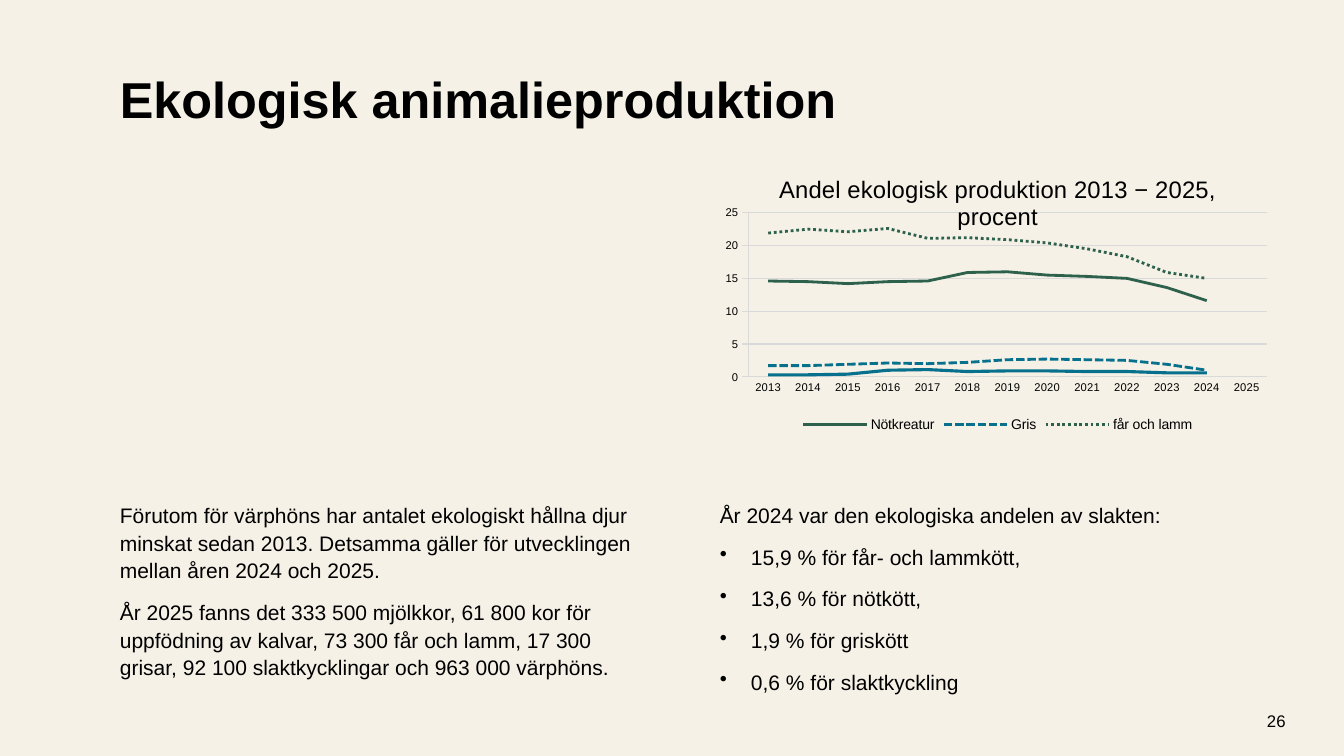
"""Build the slide on organic animal production."""
from dataclasses import dataclass

from pptx import Presentation
from pptx.chart.data import CategoryChartData as ChartData
from pptx.dml.color import RGBColor as Rgb
from pptx.enum.chart import XL_CHART_TYPE as Kind
from pptx.enum.chart import XL_LEGEND_POSITION as Place
from pptx.enum.chart import XL_TICK_MARK as Tick
from pptx.enum.dml import MSO_LINE as Dash
from pptx.enum.text import MSO_ANCHOR as Anchor
from pptx.enum.text import PP_ALIGN as Align
from pptx.oxml import parse_xml
from pptx.oxml.ns import nsdecls
from pptx.util import Inches, Pt


@dataclass(frozen=True)
class Theme:
    font: str = "Arial"
    paper: str = "F5F1E7"
    ink: str = "000000"
    grid: str = "D9D9D9"
    green: str = "2E614C"
    blue: str = "07708C"
    title: int = 36
    head: int = 17
    body: int = 15
    page: int = 12
    key: int = 10
    tick: int = 8


LOOK = Theme()
YEARS = range(2013, 2026)
SHARES = [
    ("Nötkreatur", LOOK.green, 2, None,
     (14.6, 14.5, 14.2, 14.5, 14.6, 15.9, 16, 15.5, 15.3, 15, 13.6, 11.6, None)),
    ("Gris", LOOK.blue, 2, Dash.SQUARE_DOT,
     (1.7, 1.7, 1.9, 2.1, 2, 2.2, 2.6, 2.7, 2.6, 2.5, 1.9, 1, None)),
    ("får och lamm", LOOK.green, 2, Dash.ROUND_DOT,
     (21.9, 22.5, 22.1, 22.6, 21.1, 21.2, 20.9, 20.4, 19.5, 18.3, 15.9, 15, None)),
    ("Slaktkyckling", LOOK.blue, 2.25, None,
     (0.3, 0.3, 0.4, 1, 1.1, 0.8, 0.9, 0.9, 0.8, 0.8, 0.6, 0.6, None)),
]
HERDS = [
    "Förutom för värphöns har antalet ekologiskt hållna djur minskat sedan 2013. "
    "Detsamma gäller för utvecklingen mellan åren 2024 och 2025.",
    "År 2025 fanns det 333 500 mjölkkor, 61 800 kor för uppfödning av kalvar, "
    "73 300 får och lamm, 17 300 grisar, 92 100 slaktkycklingar och 963 000 värphöns.",
]
MEAT = [
    "År 2024 var den ekologiska andelen av slakten:",
    "15,9 % för får- och lammkött,",
    "13,6 % för nötkött,",
    "1,9 % för griskött",
    "0,6 % för slaktkyckling",
]


def apply(item, **form):
    """Set each format value on the item."""
    for name, value in form.items():
        setattr(item, name, value)


def set_font(font, size, bold=False):
    """Give a font the theme face and ink."""
    apply(font, name=LOOK.font, size=Pt(size), bold=bold)
    font.color.rgb = Rgb.from_string(LOOK.ink)


def set_line(line, color, width, dash=None):
    """Colour and size a line."""
    line.color.rgb = Rgb.from_string(color)
    apply(line, width=Pt(width), dash_style=dash)


def add_dot(para):
    """Hang a bullet before a paragraph."""
    props = para._p.get_or_add_pPr()
    step = Inches(0.31)
    props.set("marL", str(step))
    props.set("indent", str(-step))
    props.append(parse_xml(f'<a:buChar {nsdecls("a")} char="•"/>'))


def add_text(slide, box, lines, size, bold=False, dots=False,
             anchor=Anchor.TOP, **form):
    """Add a wrapped text box with one paragraph a line."""
    frame = slide.shapes.add_textbox(*map(Inches, box)).text_frame
    apply(frame, word_wrap=True, vertical_anchor=anchor)
    for i, line in enumerate(lines):
        para = frame.paragraphs[0] if i == 0 else frame.add_paragraph()
        para.text = line
        apply(para, space_before=Pt(10 if i else 0), **form)
        if dots and i:
            add_dot(para)
        set_font(para.runs[0].font, size, bold)


def set_plot(chart, x, y, w, h):
    """Pin the inner plot area to fractions of the chart."""
    parts = [("layoutTarget", "inner"), ("xMode", "edge"), ("yMode", "edge"),
             ("x", x), ("y", y), ("w", w), ("h", h)]
    tags = "".join(f'<c:{tag} val="{val}"/>' for tag, val in parts)
    area = chart._chartSpace.chart.plotArea
    for old in area.findall(area.tag.replace("plotArea", "layout")):
        area.remove(old)
    area.insert(0, parse_xml(
        f'<c:layout {nsdecls("c")}><c:manualLayout>{tags}</c:manualLayout></c:layout>'))


def set_fill(chart):
    """Fill the chart with the paper colour and no border."""
    chart._chartSpace.chart.addnext(parse_xml(
        f'<c:spPr {nsdecls("c", "a")}><a:solidFill><a:srgbClr val="{LOOK.paper}"/>'
        '</a:solidFill><a:ln><a:noFill/></a:ln></c:spPr>'))


def set_key(chart, skip):
    """Show the legend below, without the skipped series."""
    chart.has_legend = True
    key = chart.legend
    apply(key, position=Place.BOTTOM, include_in_layout=False)
    set_font(key.font, LOOK.key)
    key._element.insert(1, parse_xml(
        f'<c:legendEntry {nsdecls("c")}><c:idx val="{skip}"/>'
        '<c:delete val="1"/></c:legendEntry>'))


def set_axes(chart):
    """Style both axes and the gridlines."""
    for axis, mark in ((chart.category_axis, Tick.NONE),
                       (chart.value_axis, Tick.OUTSIDE)):
        apply(axis, major_tick_mark=mark, minor_tick_mark=Tick.NONE)
        set_font(axis.tick_labels.font, LOOK.tick)
        set_line(axis.format.line, LOOK.grid, 0.75)
    apply(chart.value_axis, minimum_scale=0, maximum_scale=25, major_unit=5)
    set_line(chart.value_axis.major_gridlines.format.line, LOOK.grid, 0.75)


def add_lines(slide, box, title):
    """Add the line chart of organic shares."""
    data = ChartData()
    data.categories = [str(year) for year in YEARS]
    for name, *_, vals in SHARES:
        data.add_series(name, vals)
    chart = slide.shapes.add_chart(Kind.LINE, *map(Inches, box), data).chart
    set_font(chart.font, LOOK.tick)
    set_fill(chart)
    chart.has_title = True
    para = chart.chart_title.text_frame.paragraphs[0]
    para.text = title
    set_font(para.runs[0].font, LOOK.head)
    set_axes(chart)
    set_key(chart, len(SHARES) - 1)
    set_plot(chart, 0.056, 0.196, 0.923, 0.59)
    plot = chart.plots[0]
    plot.vary_by_categories = False
    for series, (_, color, width, dash, _) in zip(plot.series, SHARES):
        series.smooth = False
        set_line(series.format.line, color, width, dash)


def main():
    """Build and save the slide."""
    deck = Presentation()
    apply(deck, slide_width=Inches(13.33), slide_height=Inches(7.5))
    slide = deck.slides.add_slide(deck.slide_layouts[6])
    back = slide.background.fill
    back.solid()
    back.fore_color.rgb = Rgb.from_string(LOOK.paper)
    add_text(slide, (1.09, 0.68, 9.57, 0.65), ["Ekologisk animalieproduktion"],
             LOOK.title, bold=True, anchor=Anchor.BOTTOM, line_spacing=0.9)
    add_lines(slide, (7.11, 1.57, 5.57, 2.76),
              "Andel ekologisk produktion 2013 − 2025, procent")
    add_text(slide, (1.09, 4.91, 5.49, 2.24), HERDS, LOOK.body, line_spacing=1.1)
    add_text(slide, (7.04, 4.91, 5.49, 2.44), MEAT, LOOK.body, dots=True,
             line_spacing=1.1)
    add_text(slide, (11.69, 6.95, 1.16, 0.4), ["26"], LOOK.page,
             anchor=Anchor.MIDDLE, alignment=Align.RIGHT)
    deck.save("out.pptx")


if __name__ == "__main__":
    main()
